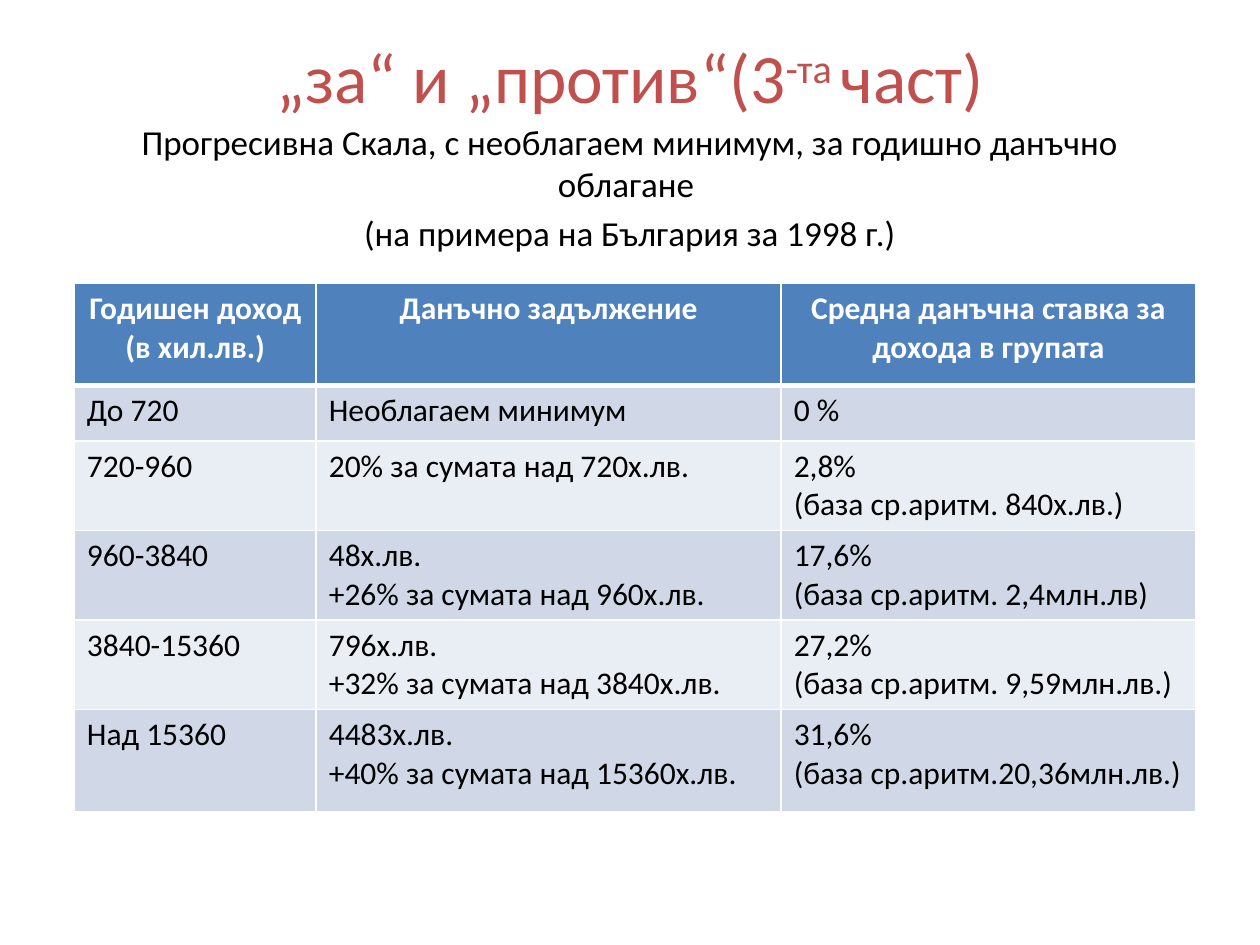
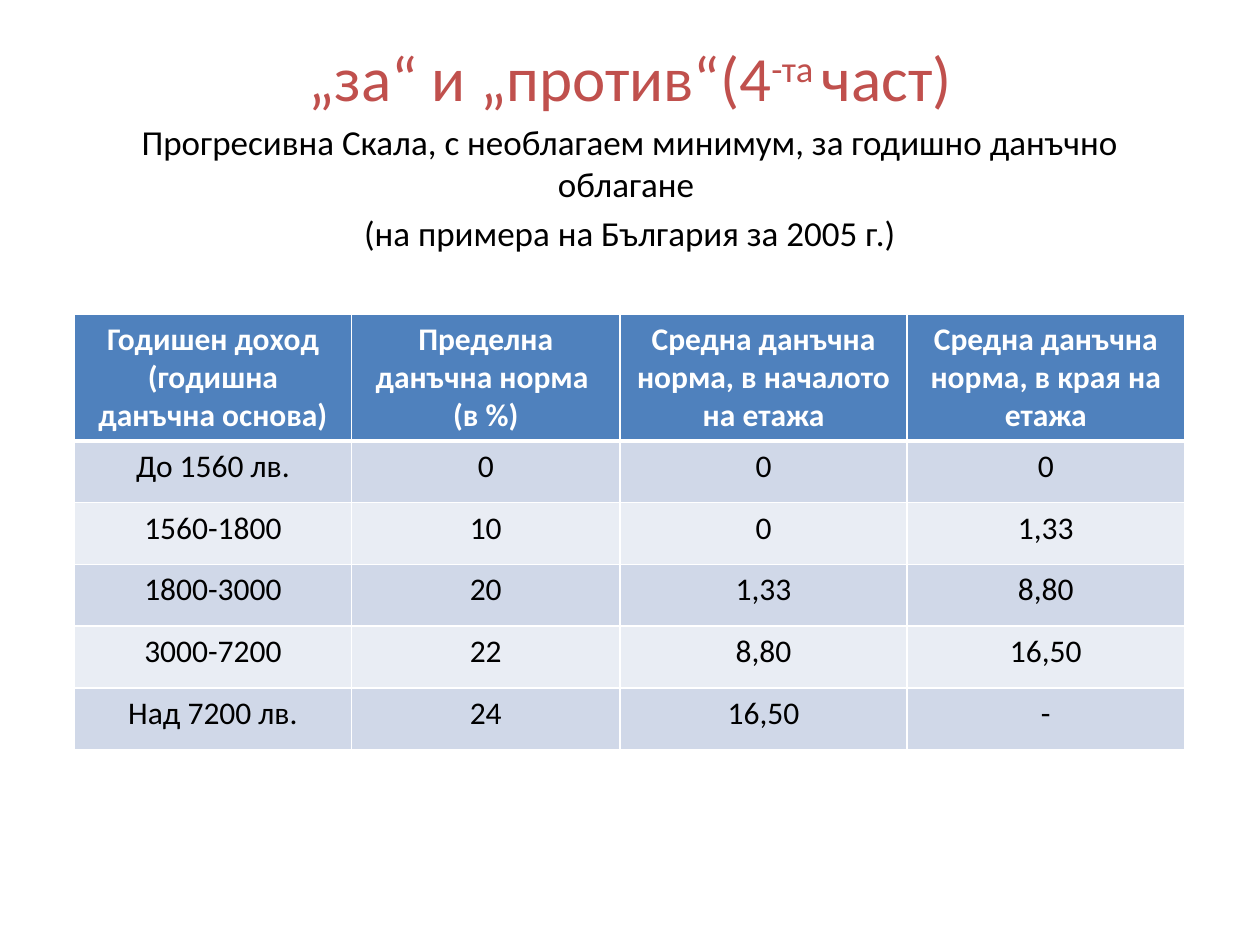
import lxml.etree
import pptx
import pptx.dml.color
import pptx.enum.text
import pptx.oxml.ns
import pptx.util

Inches = pptx.util.Inches
RGBColor = pptx.dml.color.RGBColor
CENTER = pptx.enum.text.PP_ALIGN.CENTER
LEFT = pptx.enum.text.PP_ALIGN.LEFT
TOP = pptx.enum.text.MSO_ANCHOR.TOP
MIDDLE = pptx.enum.text.MSO_ANCHOR.MIDDLE

RED = RGBColor(0xC0, 0x50, 0x4D)
BLUE = RGBColor(0x4F, 0x81, 0xBD)
BANDS = RGBColor(0xD0, 0xD8, 0xE8), RGBColor(0xE9, 0xED, 0xF4)
BLACK = RGBColor(0, 0, 0)
WHITE = RGBColor(0xFF, 0xFF, 0xFF)
FONT = "Calibri"


def write(frame, text, size=18, color=BLACK, bold=False, align=LEFT, before=0):
    """Fill a frame: a newline starts a paragraph, a pair of ^ encloses superscript."""
    for row, line in enumerate(text.split("\n")):
        para = frame.add_paragraph() if row else frame.paragraphs[0]
        para.alignment = align
        para.space_before = pptx.util.Pt(before)
        for part, words in enumerate(line.split("^")):
            run = para.add_run()
            run.text = words
            font = run.font
            font.name, font.size, font.bold = FONT, pptx.util.Pt(size), bold
            font.color.rgb = color
            if part % 2:
                run._r.get_or_add_rPr().set("baseline", "30000")


def edge(cell, **widths):
    """Draw white borders; widths are points for the sides L, R, T and B."""
    props = cell._tc.get_or_add_tcPr()
    for side in "LRTB":
        width = pptx.util.Pt(widths.get(side, 1))
        line = lxml.etree.SubElement(
            props, pptx.oxml.ns.qn(f"a:ln{side}"), w=str(int(width)))
        fill = lxml.etree.SubElement(line, pptx.oxml.ns.qn("a:solidFill"))
        lxml.etree.SubElement(fill, pptx.oxml.ns.qn("a:srgbClr"), val=str(WHITE))


class Deck:
    def __init__(self):
        self.show = pptx.Presentation()
        self.show.slide_width = Inches(10)
        self.show.slide_height = Inches(7.5)
        self.slide = None

    def text(self, text, top, height, anchor=TOP, **style):
        box = self.slide.shapes.add_textbox(
            Inches(0.5), Inches(top), Inches(9), Inches(height))
        frame = box.text_frame
        frame.word_wrap = True
        frame.vertical_anchor = anchor
        write(frame, text, align=CENTER, **style)

    def page(self, part, size, year):
        """Start a slide with the shared title and the heading of its tax year."""
        self.slide = self.show.slides.add_slide(self.show.slide_layouts[6])
        self.text(f"„за“ и „против“({part}^-та ^част)", 0.3, 0.61,
                  anchor=MIDDLE, size=size, color=RED)
        self.text("Прогресивна Скала, с необлагаем минимум, за годишно данъчно облагане \n"
                  f"(на примера на България за {year} г.)", 0.91, 5.78,
                  size=20, before=4)

    def table(self, rows, top, widths, heights, align=LEFT):
        shape = self.slide.shapes.add_table(
            len(rows), len(widths), Inches(0.59), Inches(top),
            Inches(sum(widths)), Inches(sum(heights)))
        grid = shape.table
        for col, width in zip(grid.columns, widths):
            col.width = Inches(width)
        for r, (row, height) in enumerate(zip(rows, heights)):
            grid.rows[r].height = Inches(height)
            head = r == 0
            for c, text in enumerate(row):
                cell = grid.cell(r, c)
                edge(cell, T=3 if r == 1 else 1, B=3 if head else 1)
                cell.fill.solid()
                cell.fill.fore_color.rgb = BLUE if head else BANDS[(r - 1) % 2]
                write(cell.text_frame, text, bold=head,
                      color=WHITE if head else BLACK,
                      align=CENTER if head else align)


def main():
    deck = Deck()

    deck.page(3, 39.6, 1998)
    deck.table([
        ("Годишен доход (в хил.лв.)", "Данъчно задължение",
         "Средна данъчна ставка за дохода в групата"),
        ("До 720", "Необлагаем минимум", "0 %"),
        ("720-960", "20% за сумата над 720х.лв.",
         "2,8%\n(база ср.аритм. 840х.лв.)"),
        ("960-3840", "48х.лв.\n+26% за сумата над 960х.лв.",
         "17,6%\n(база ср.аритм. 2,4млн.лв)"),
        ("3840-15360", "796х.лв.\n+32% за сумата над 3840х.лв.",
         "27,2%\n(база ср.аритм. 9,59млн.лв.)"),
        ("Над 15360", "4483х.лв.\n+40% за сумата над 15360х.лв.",
         "31,6%\n(база ср.аритм.20,36млн.лв.)"),
    ], 2.25, [1.92, 3.69, 3.29], [0.81, 0.44, 0.71, 0.71, 0.71, 0.81])

    deck.page(4, 36, 2005)
    deck.table([
        ("Годишен доход (годишна данъчна основа)",
         "Пределна данъчна норма \n(в %)",
         "Средна данъчна норма, в началото на етажа",
         "Средна данъчна норма, в края на етажа"),
        ("До 1560 лв.", "0", "0", "0"),
        ("1560-1800", "10", "0", "1,33"),
        ("1800-3000", "20", "1,33", "8,80"),
        ("3000-7200", "22", "8,80", "16,50"),
        ("Над 7200 лв.", "24", "16,50", "-"),
    ], 2.49, [2.2, 2.13, 2.28, 2.2], [1.01] + [0.49] * 5, align=CENTER)

    deck.show.save("out.pptx")


if __name__ == "__main__":
    main()
